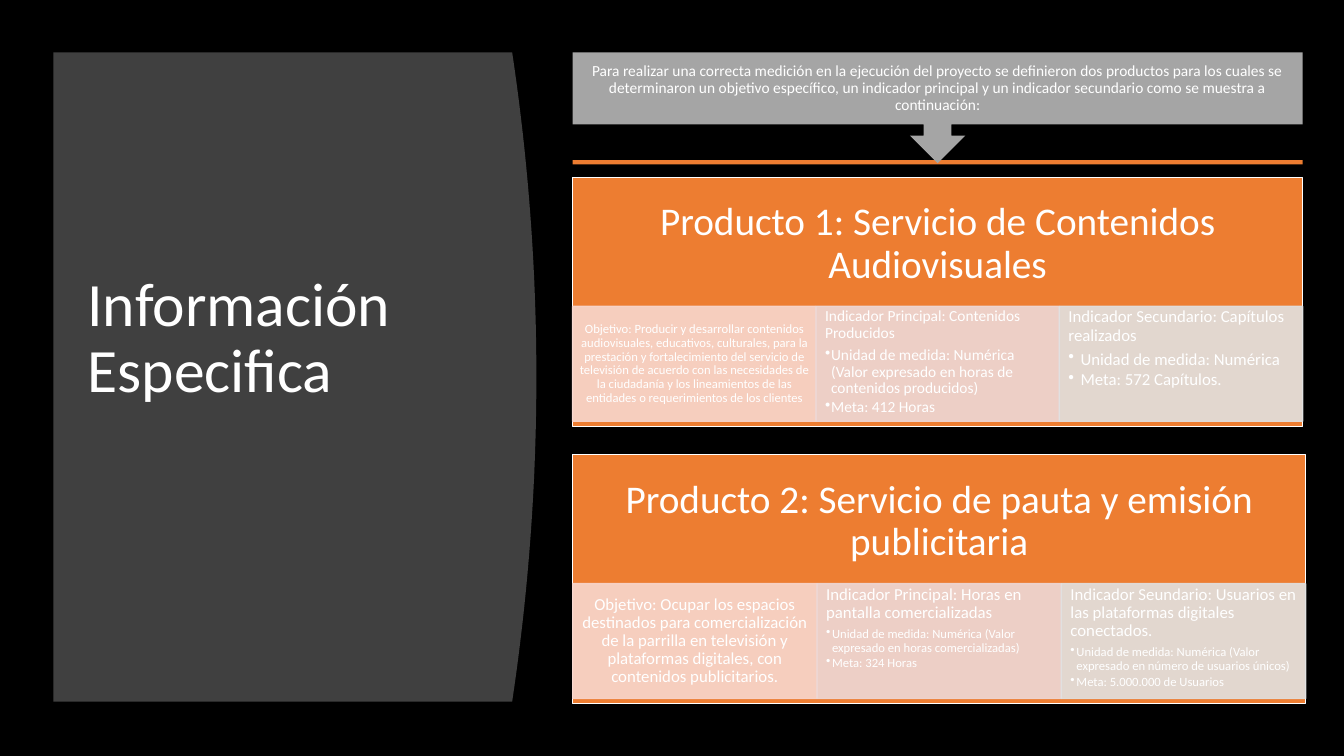
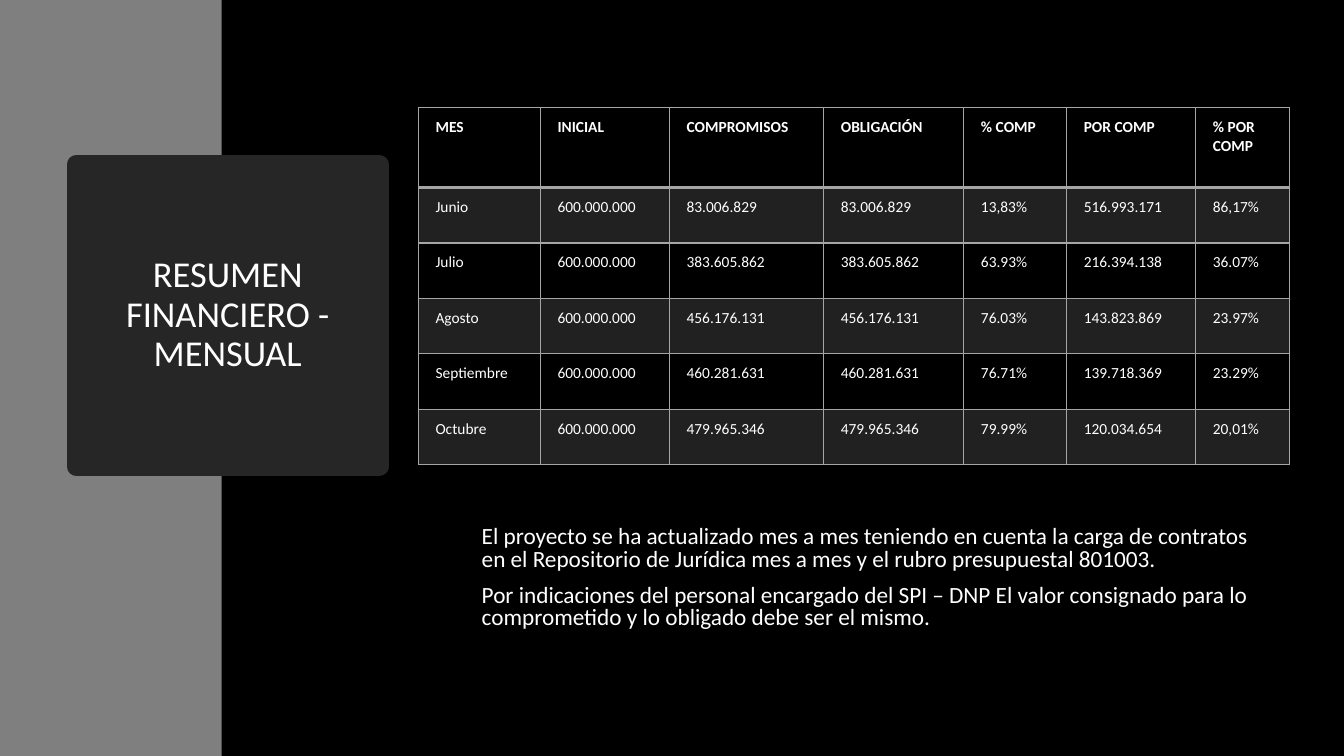
from lxml.etree import SubElement
from pptx import Presentation
from pptx.dml.color import RGBColor
from pptx.enum.shapes import MSO_SHAPE as Kind
from pptx.enum.text import MSO_ANCHOR as Anchor, PP_ALIGN as Align
from pptx.oxml import parse_xml
from pptx.oxml.ns import nsdecls, qn
from pptx.util import Inches, Pt

WHITE, BLACK, ORANGE, GRAY = "FFFFFF", "000000", "ED7D31", "A5A5A5"
TINTS = ["F8D7CE", "EDD9D7", "E1E1E1"]
FONT = "Calibri"


def tint(code):
    return RGBColor.from_string(code)


def fade(node, rate):
    for color in node.iter(qn("a:srgbClr")):
        SubElement(color, qn("a:alpha"), val=str(rate * 1000))


def write(frame, text, size=12, bold=False, align=Align.LEFT, lead=0.9,
          before=0, after=0, dent=0):
    para = frame.paragraphs[0]
    if para.runs:
        para = frame.add_paragraph()
    para.alignment = align
    para.line_spacing = lead
    para.space_before, para.space_after = Pt(before), Pt(after)
    if dent:
        props = para._p.get_or_add_pPr()
        props.set("marL", str(Inches(dent)))
        props.set("indent", str(-Inches(dent)))
        SubElement(props, qn("a:buChar"), char="•")
    run = para.add_run()
    run.text = text
    run.font.name, run.font.size, run.font.bold = FONT, Pt(size), bold
    run.font.color.rgb = tint(WHITE)


class Deck:
    def __init__(self):
        self.file = Presentation()
        self.file.slide_width = Inches(13.33)
        self.file.slide_height = Inches(7.5)
        self.slide = None

    def page(self):
        self.slide = self.file.slides.add_slide(self.file.slide_layouts[6])
        fill = self.slide.background.fill
        fill.solid()
        fill.fore_color.rgb = tint(BLACK)

    def paint(self, shape, fill, line=None, width=1, alpha=None):
        shape.shadow.inherit = False
        shape.fill.solid()
        shape.fill.fore_color.rgb = tint(fill)
        if line:
            shape.line.color.rgb = tint(line)
            shape.line.width = Pt(width)
        else:
            shape.line.fill.background()
        if alpha:
            fade(shape.element.spPr, alpha)

    def frame(self, shape, anchor=Anchor.MIDDLE, pad=(0.1, 0.05)):
        frame = shape.text_frame
        frame.word_wrap = True
        frame.vertical_anchor = anchor
        frame.margin_left = frame.margin_right = Inches(pad[0])
        frame.margin_top = frame.margin_bottom = Inches(pad[1])
        return frame

    def box(self, area, fill, kind=Kind.RECTANGLE, **look):
        shape = self.slide.shapes.add_shape(kind, *map(Inches, area))
        self.paint(shape, fill, **look)
        return shape

    def label(self, area, **look):
        return self.frame(self.slide.shapes.add_textbox(*map(Inches, area)), **look)

    def panel(self, left, top, side, tip, base, fill):
        steps = 40
        mid, half = (top + base) / 2, (base - top) / 2
        edge = []
        for i in range(steps + 1):
            y = top + (base - top) * i / steps
            edge.append((tip - (tip - side) * ((y - mid) / half) ** 2, y))
        pen = self.slide.shapes.build_freeform(Inches(left), Inches(top))
        spots = edge + [(left, base)]
        pen.add_line_segments([(Inches(x), Inches(y)) for x, y in spots])
        self.paint(pen.convert_to_shape(), fill)

    def card(self, left, top, width, title, goal, cells):
        self.box((left, top, width, 2.47), ORANGE, line=WHITE)
        head = self.label((left, top, width, 1.33), pad=(0.22, 0.22))
        write(head, title, size=28, align=Align.CENTER)
        step = width / 3
        for i, color in enumerate(TINTS):
            area = (left + i * step, top + 1.28, step, 1.14)
            shape = self.box(area, color, line=color, alpha=90)
            if i == 0:
                text, size, pad = goal
                write(self.frame(shape, pad=pad), text, size=size, align=Align.CENTER)
                continue
            name, size, notes, small, dent = cells[i - 1]
            frame = self.frame(shape, Anchor.TOP, (0.09, 0.02))
            write(frame, name, size=size, after=size * 0.35)
            for note in notes:
                write(frame, note, size=small, after=small * 0.15, dent=dent)

    def edges(self, cell, widths):
        props = cell._tc.get_or_add_tcPr()
        for i, (side, width) in enumerate(zip("LRTB", widths)):
            props.insert(i, parse_xml(
                f'<a:ln{side} {nsdecls("a")} w="{Pt(width)}"><a:solidFill>'
                f'<a:srgbClr val="{GRAY}"/></a:solidFill></a:ln{side}>'))

    def table(self, left, top, widths, tall, rows):
        area = (left, top, sum(widths), sum(tall))
        grid = self.slide.shapes.add_table(
            len(rows), len(widths), *map(Inches, area)).table
        for col, width in zip(grid.columns, widths):
            col.width = Inches(width)
        for r, row in enumerate(rows):
            grid.rows[r].height = Inches(tall[r])
            for c, text in enumerate(row):
                cell = grid.cell(r, c)
                cell.margin_left = Inches(0.17)
                cell.margin_right = cell.margin_top = cell.margin_bottom = Inches(0.1)
                write(cell.text_frame, text, size=11, bold=r == 0, lead=1)
                if r % 2:
                    cell.fill.solid()
                    cell.fill.fore_color.rgb = tint(GRAY)
                    fade(cell._tc.tcPr, 20)
                else:
                    cell.fill.background()
                self.edges(cell, (1, 1, 2 if r == 1 else 1, 2 if r == 0 else 1))


def goals(deck):
    deck.page()
    deck.panel(0.53, 0.52, 5.08, 5.32, 6.96, "404040")
    write(deck.label((0.77, 0.75, 3.74, 5.24)), "Información Especifica", size=44)
    deck.card(
        5.68, 1.76, 7.24, "Producto 1: Servicio de Contenidos Audiovisuales",
        ("Objetivo: Producir y desarrollar contenidos audiovisuales, educativos, "
         "culturales, para la prestación y fortalecimiento del servicio de televisión "
         "de acuerdo con las necesidades de la ciudadanía y los lineamientos de las "
         "entidades o requerimientos de los clientes", 9, (0.07, 0.01)),
        [("Indicador Principal: Contenidos Producidos", 11,
          ["Unidad de medida: Numérica (Valor expresado en horas de contenidos producidos)",
           "Meta: 412 Horas"], 11, 0.06),
         ("Indicador Secundario: Capítulos realizados", 12,
          ["Unidad de medida: Numérica", "Meta: 572 Capítulos."], 12, 0.12)])
    deck.card(
        5.68, 4.51, 7.27, "Producto 2: Servicio de pauta y emisión publicitaria",
        ("Objetivo: Ocupar los espacios destinados para comercialización de la parrilla "
         "en televisión y plataformas digitales, con contenidos publicitarios.",
         12, (0.09, 0.02)),
        [("Indicador Principal: Horas en pantalla comercializadas", 12,
          ["Unidad de medida: Numérica (Valor expresado en horas comercializadas)",
           "Meta: 324 Horas"], 9, 0.06),
         ("Indicador Seundario: Usuarios en las plataformas digitales conectados.", 12,
          ["Unidad de medida: Numérica (Valor expresado en número de usuarios únicos)",
           "Meta: 5.000.000 de Usuarios"], 9, 0.06)])
    deck.box((5.68, 1.59, 7.24, 0.04), ORANGE)
    intro = deck.box((5.68, 0.52, 7.24, 1.1), GRAY, Kind.DOWN_ARROW_CALLOUT)
    write(deck.frame(intro, pad=(0.09, 0.09)),
          "Para realizar una correcta medición en la ejecución del proyecto se definieron "
          "dos productos para los cuales se determinaron un objetivo específico, un "
          "indicador principal y un indicador secundario como se muestra a continuación:",
          size=11, align=Align.CENTER)


def funds(deck):
    deck.page()
    deck.box((0, 0, 2.2, 7.5), "7F7F7F")
    title = deck.box((0.76, 1.63, 3, 3), "262626", line="262626", width=13.75)
    SubElement(title.element.spPr.find(qn("a:ln")), qn("a:round"))
    write(deck.frame(title), "RESUMEN FINANCIERO - MENSUAL", size=26, align=Align.CENTER)
    body = deck.label((4.68, 5.18, 7.86, 1.41), anchor=Anchor.TOP)
    for text in (
            "El proyecto se ha actualizado mes a mes teniendo en cuenta la carga de contratos "
            "en el Repositorio de Jurídica mes a mes y el rubro presupuestal 801003.",
            "Por indicaciones del personal encargado del SPI – DNP El valor consignado para lo "
            "comprometido y lo obligado debe ser el mismo."):
        write(body, text, size=16.6, lead=0.8, before=10)
    head = ["MES", "INICIAL", "COMPROMISOS", "OBLIGACIÓN", "% COMP", "POR COMP", "% POR COMP"]
    data = [
        ("Junio", "83.006.829", "13,83%", "516.993.171", "86,17%"),
        ("Julio", "383.605.862", "63.93%", "216.394.138", "36.07%"),
        ("Agosto", "456.176.131", "76.03%", "143.823.869", "23.97%"),
        ("Septiembre", "460.281.631", "76.71%", "139.718.369", "23.29%"),
        ("Octubre", "479.965.346", "79.99%", "120.034.654", "20,01%"),
    ]
    rows = [[month, "600.000.000", spent, spent, *rest] for month, spent, *rest in data]
    deck.table(4.15, 1.07, [1.21, 1.28, 1.53, 1.39, 1.02, 1.28, 0.93],
               [0.79] + [0.55] * len(rows), [head] + rows)


def main():
    deck = Deck()
    goals(deck)
    funds(deck)
    deck.file.save("out.pptx")


if __name__ == "__main__":
    main()
